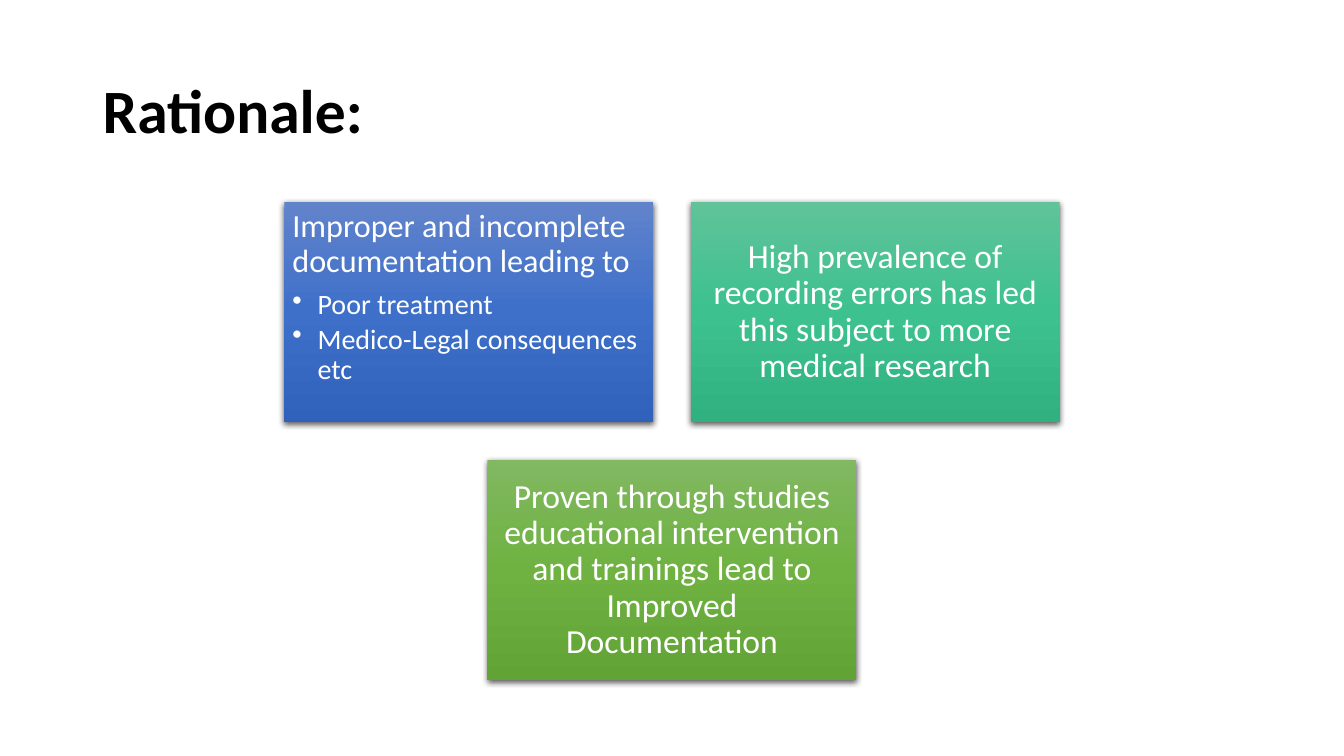
from copy import deepcopy

from pptx import Presentation
from pptx.dml.color import RGBColor
from pptx.enum.shapes import MSO_SHAPE
from pptx.enum.text import MSO_ANCHOR, PP_ALIGN
from pptx.oxml import parse_xml
from pptx.oxml.ns import nsdecls, qn
from pptx.util import Inches, Pt

FONT = "Calibri"
BLACK = RGBColor(0x00, 0x00, 0x00)
WHITE = RGBColor(0xFF, 0xFF, 0xFF)
BLUES = (RGBColor(0x61, 0x83, 0xCB), RGBColor(0x3E, 0x70, 0xCA), RGBColor(0x30, 0x62, 0xBB))
TEALS = (RGBColor(0x60, 0xC3, 0x9A), RGBColor(0x3D, 0xC1, 0x8F), RGBColor(0x31, 0xB0, 0x80))
GREENS = (RGBColor(0x81, 0xB8, 0x61), RGBColor(0x6F, 0xB2, 0x42), RGBColor(0x62, 0xA3, 0x36))

PAGE_WIDTH, PAGE_HEIGHT = 13.33, 7.5
CARD_WIDTH, CARD_HEIGHT, GAP = 3.66, 2.19, 0.37
CARDS_TOP = 2

# Each row of cards: colours, heading, bullet points
CARD_ROWS = [
    [
        (BLUES, "Improper and incomplete documentation leading to",
         ["Poor treatment", "Medico-Legal consequences etc"]),
        (TEALS, "High prevalence of recording errors has led this subject "
                "to more medical research", []),
    ],
    [
        (GREENS, "Proven through studies educational intervention and trainings "
                 "lead to Improved Documentation", []),
    ],
]


def write_paragraph(para, text, size, color, bold=False):
    para.text = text
    para.line_spacing = 0.9
    for span in para.runs:
        span.font.name = FONT
        span.font.size = Pt(size)
        span.font.bold = bold
        span.font.color.rgb = color


def set_margins(frame, margin):
    frame.margin_left = frame.margin_right = Inches(margin)
    frame.margin_top = frame.margin_bottom = Inches(margin)


def add_bullet(para):
    properties = para._p.get_or_add_pPr()
    properties.set("marL", str(Inches(0.25)))
    properties.set("indent", str(-Inches(0.25)))
    properties.append(parse_xml(f'<a:buChar {nsdecls("a")} char="•"/>'))


def fill_gradient(box, colors):
    """Shade the box from top to bottom through three colours."""
    box.fill.gradient()
    box.fill.gradient_angle = 270
    stop_list = box._element.spPr.find(qn("a:gradFill")).find(qn("a:gsLst"))
    stop_list.insert(1, deepcopy(stop_list[0]))
    for stop, position, color in zip(box.fill.gradient_stops, (0, 0.5, 1), colors):
        stop.position = position
        stop.color.rgb = color


def add_shadow(box):
    box.shadow.inherit = False
    effects = box._element.spPr.find(qn("a:effectLst"))
    effects.append(parse_xml(
        f'<a:outerShdw {nsdecls("a")} blurRad="{Pt(4.5)}" dist="{Pt(1.5)}" '
        'dir="5400000" algn="ctr" rotWithShape="0">'
        '<a:srgbClr val="000000"><a:alpha val="63000"/></a:srgbClr></a:outerShdw>'))


def add_title(page, text):
    box = page.shapes.add_textbox(Inches(0.92), Inches(0.4), Inches(11.5), Inches(1.45))
    frame = box.text_frame
    frame.word_wrap = True
    frame.vertical_anchor = MSO_ANCHOR.MIDDLE
    write_paragraph(frame.paragraphs[0], text, 44, BLACK, bold=True)


def add_card(page, left, top, colors, heading, points):
    box = page.shapes.add_shape(MSO_SHAPE.RECTANGLE, Inches(left), Inches(top),
                                Inches(CARD_WIDTH), Inches(CARD_HEIGHT))
    fill_gradient(box, colors)
    box.line.fill.background()
    add_shadow(box)

    frame = box.text_frame
    frame.word_wrap = True
    set_margins(frame, 0.08 if points else 0.1)
    frame.vertical_anchor = MSO_ANCHOR.TOP if points else MSO_ANCHOR.MIDDLE
    first = frame.paragraphs[0]
    write_paragraph(first, heading, 23 if points else 24, WHITE)
    first.alignment = PP_ALIGN.LEFT if points else PP_ALIGN.CENTER
    if points:
        first.space_after = Pt(8)
    for point in points:
        para = frame.add_paragraph()
        write_paragraph(para, point, 20, WHITE)
        para.level = 1
        para.alignment = PP_ALIGN.LEFT
        para.space_after = Pt(3)
        add_bullet(para)


def main():
    deck = Presentation()
    deck.slide_width, deck.slide_height = Inches(PAGE_WIDTH), Inches(PAGE_HEIGHT)
    page = deck.slides.add_slide(deck.slide_layouts[6])

    add_title(page, "Rationale:")

    # Rows of cards, each centred on the page
    for row, cards in enumerate(CARD_ROWS):
        row_width = len(cards) * (CARD_WIDTH + GAP) - GAP
        row_left = (PAGE_WIDTH - row_width) / 2
        top = CARDS_TOP + row * (CARD_HEIGHT + GAP)
        for column, card in enumerate(cards):
            add_card(page, row_left + column * (CARD_WIDTH + GAP), top, *card)

    deck.save("out.pptx")


if __name__ == "__main__":
    main()
